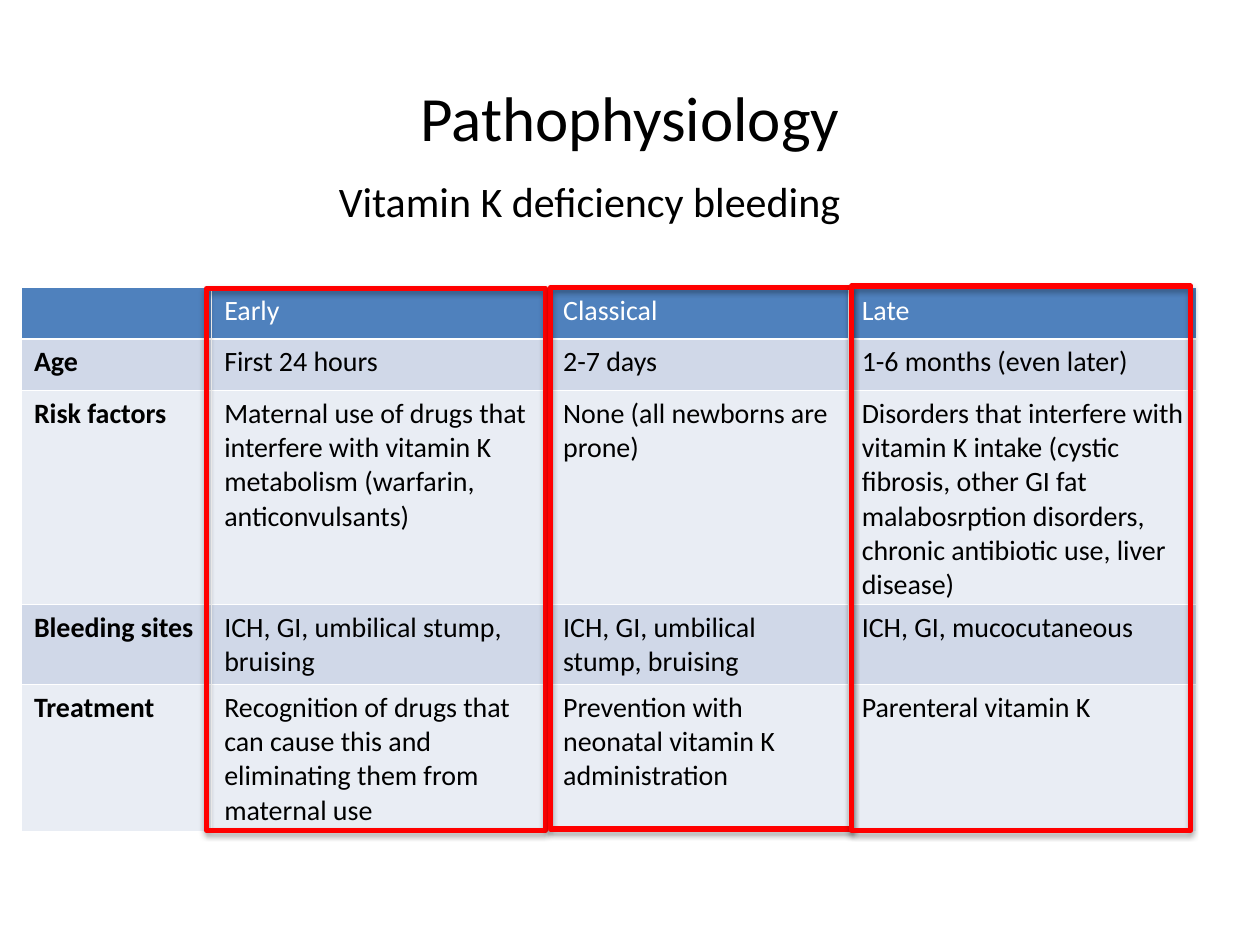
"""Build a slide comparing the three forms of vitamin K deficiency bleeding."""
from dataclasses import dataclass
from typing import Any

from lxml import etree
from pptx import Presentation
from pptx import util as u
from pptx.dml.color import RGBColor
from pptx.enum import shapes, text
from pptx.oxml.ns import qn

COLUMNS, ROWS = 100, 75
CELL = u.Inches(0.1)
FONT = "Calibri"
BLACK, WHITE, RED = "000000", "FFFFFF", "FF0000"
HEADER_FILL, BAND_FILLS = "4F81BD", ("D0D8E8", "E9EDF4")
COLUMN_WIDTHS = (15.1, 26.9, 23.7, 27.6)
ROW_HEIGHT = 4.1
TABLE_ROWS = (
    ("", "Early", "Classical", "Late"),
    ("Age", "First 24 hours", "2-7 days", "1-6 months (even later)"),
    (
        "Risk factors",
        "Maternal use of drugs that interfere with vitamin K metabolism (warfarin, anticonvulsants)",
        "None (all newborns are prone)",
        "Disorders that interfere with vitamin K intake (cystic fibrosis, other GI fat "
        "malabosrption disorders, chronic antibiotic use, liver disease)",
    ),
    (
        "Bleeding sites",
        "ICH, GI, umbilical stump, bruising",
        "ICH, GI, umbilical stump, bruising",
        "ICH, GI, mucocutaneous",
    ),
    (
        "Treatment",
        "Recognition of drugs that can cause this and eliminating them from maternal use",
        "Prevention with neonatal vitamin K administration",
        "Parenteral vitamin K",
    ),
)


@dataclass(frozen=True)
class Box:
    """A place on the slide in grid columns and rows."""

    left: float
    top: float
    width: float
    height: float

    def lengths(self) -> tuple[int, ...]:
        """Return left, top, width and height as slide lengths."""
        return tuple(grid(n) for n in (self.left, self.top, self.width, self.height))


@dataclass(frozen=True)
class Label:
    """A line of text with its place and format."""

    words: str
    box: Box
    size: float
    align: Any
    anchor: Any


LABELS = (
    Label("Pathophysiology", Box(5, 3, 90, 12.5), 36, text.PP_ALIGN.CENTER, text.MSO_ANCHOR.MIDDLE),
    Label("Vitamin K deficiency bleeding", Box(25.9, 13.4, 53.5, 5), 24, text.PP_ALIGN.LEFT, text.MSO_ANCHOR.TOP),
)
TABLE_BOX = Box(1.7, 22.8, sum(COLUMN_WIDTHS), ROW_HEIGHT * len(TABLE_ROWS))
HIGHLIGHTS = (Box(16.4, 22.9, 26.9, 43), Box(43.7, 22.8, 23.9, 43), Box(67.6, 22.7, 26.9, 43.2))


def grid(count: float) -> int:
    """Return the length of a number of grid cells."""
    return round(count * CELL)


def colour(value: str) -> RGBColor:
    """Return the colour of a hex string."""
    return RGBColor.from_string(value)


def set_all(target: Any, values: dict[str, Any]) -> None:
    """Set each named attribute on the target."""
    for name, value in values.items():
        setattr(target, name, value)


def write(frame: Any, words: str, size: float, ink: str = BLACK, bold: bool = False) -> None:
    """Write one formatted paragraph into a text frame."""
    paragraph = frame.paragraphs[0]
    run = paragraph.add_run()
    run.text = words
    set_all(run.font, {"name": FONT, "size": u.Pt(size), "bold": bold})
    run.font.color.rgb = colour(ink)


def draw_label(slide: Any, label: Label) -> None:
    """Draw a text box."""
    frame = slide.shapes.add_textbox(*label.box.lengths()).text_frame
    set_all(frame, {"word_wrap": True, "vertical_anchor": label.anchor})
    write(frame, label.words, label.size)
    frame.paragraphs[0].alignment = label.align


def draw_table(slide: Any) -> None:
    """Draw the comparison table."""
    table = slide.shapes.add_table(len(TABLE_ROWS), len(COLUMN_WIDTHS), *TABLE_BOX.lengths()).table
    for column, width in zip(table.columns, COLUMN_WIDTHS):
        column.width = grid(width)
    for row, entries in enumerate(TABLE_ROWS):
        table.rows[row].height = grid(ROW_HEIGHT)
        fill = BAND_FILLS[(row - 1) % 2] if row else HEADER_FILL
        for column, words in enumerate(entries):
            cell = table.cell(row, column)
            cell.fill.solid()
            cell.fill.fore_color.rgb = colour(fill)
            if words:
                write(cell.text_frame, words, 16, BLACK if row else WHITE, column == 0)


def add_shadow(shape: Any) -> None:
    """Give a shape a soft shadow straight below it."""
    shape.shadow.inherit = False
    effects = shape._element.spPr.find(qn("a:effectLst"))
    shadow = etree.SubElement(
        effects,
        qn("a:outerShdw"),
        blurRad=str(u.Pt(3.1)),
        dist=str(u.Pt(1.8)),
        dir=str(90 * 60000),
        rotWithShape="0",
    )
    ink = etree.SubElement(shadow, qn("a:srgbClr"), val=BLACK)
    etree.SubElement(ink, qn("a:alpha"), val="35000")


def draw_highlight(slide: Any, box: Box) -> None:
    """Draw an unfilled frame around a table column."""
    shape = slide.shapes.add_shape(shapes.MSO_SHAPE.RECTANGLE, *box.lengths())
    shape.fill.background()
    shape.line.color.rgb = colour(RED)
    shape.line.width = u.Pt(3)
    add_shadow(shape)


def main() -> None:
    """Build and save the presentation."""
    presentation = Presentation()
    set_all(presentation, {"slide_width": grid(COLUMNS), "slide_height": grid(ROWS)})
    slide = presentation.slides.add_slide(presentation.slide_layouts[6])
    title, subtitle = LABELS
    draw_label(slide, title)
    draw_table(slide)
    draw_label(slide, subtitle)
    for box in HIGHLIGHTS:
        draw_highlight(slide, box)
    presentation.save("out.pptx")


if __name__ == "__main__":
    main()
